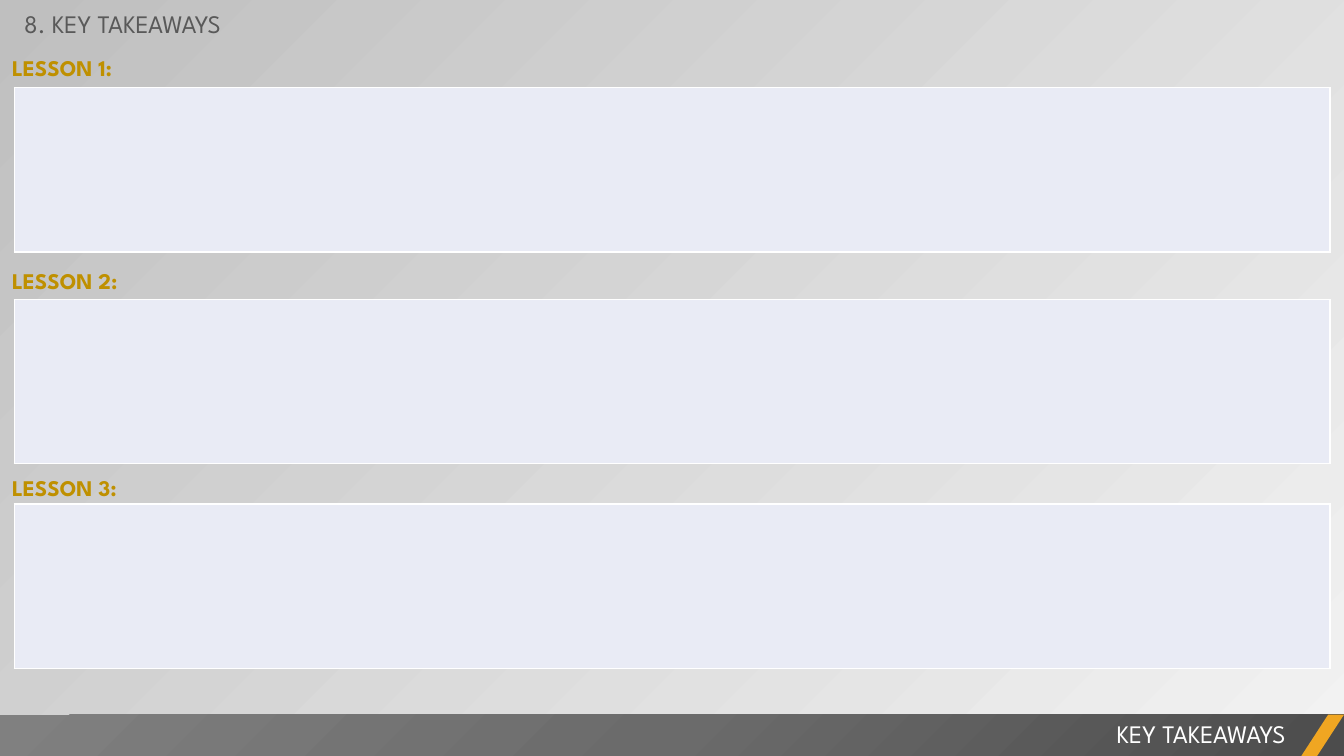
import pptx
import pptx.util
import pptx.dml.color
import pptx.enum.shapes
import pptx.enum.text
import pptx.oxml
import pptx.oxml.ns
from dataclasses import dataclass

Inches = pptx.util.Inches
Pt = pptx.util.Pt
Shape = pptx.enum.shapes.MSO_SHAPE
Align = pptx.enum.text.PP_ALIGN
NS = pptx.oxml.ns.nsdecls("a")


@dataclass(frozen=True)
class Theme:
    font: str = "League Spartan"
    title: int = 18
    label: int = 16
    gold: str = "BF9000"
    amber: str = "F0A622"
    gray: str = "595959"
    white: str = "FFFFFF"
    panel: str = "E9EBF5"
    back: tuple = ("F2F2F2", "BFBFBF")
    bar: tuple = ((0, "4C4C4C"), (50, "6B6B6B"), (100, "808080"))


THEME = Theme()


def color(code):
    return pptx.dml.color.RGBColor.from_string(code)


def apply(item, values):
    for name, value in values.items():
        setattr(item, name, value)


def box(at):
    return [Inches(n) for n in at]


# Background
def add_back(slide):
    fill = slide.background.fill
    fill.gradient()
    fill.gradient_angle = 135
    for stop, code, place in zip(fill.gradient_stops, THEME.back, (0, 1)):
        stop.color.rgb = color(code)
        stop.position = place


# Text
def add_text(slide, at, text, size, code, bold=False, inset=(0.1, 0.05), para=None):
    frame = slide.shapes.add_textbox(*box(at)).text_frame
    side, edge = box(inset)
    apply(frame, {
        "word_wrap": True,
        "auto_size": pptx.enum.text.MSO_AUTO_SIZE.SHAPE_TO_FIT_TEXT,
        "margin_left": side, "margin_right": side,
        "margin_top": edge, "margin_bottom": edge,
    })
    line = frame.paragraphs[0]
    apply(line, para or {})
    run = line.add_run()
    run.text = text
    apply(run.font, {"name": THEME.font, "size": Pt(size), "bold": bold})
    run.font.color.rgb = color(code)


# Answer panel: a table of one cell with a thin white border
def add_panel(slide, at):
    table = slide.shapes.add_table(1, 1, *box(at)).table
    apply(table, {"first_row": False, "horz_banding": False})
    cell = table.cell(0, 0)
    cell.fill.solid()
    cell.fill.fore_color.rgb = color(THEME.panel)
    props = cell._tc.get_or_add_tcPr()
    for spot, side in enumerate(("lnL", "lnR", "lnT", "lnB")):
        props.insert(spot, pptx.oxml.parse_xml(
            f'<a:{side} {NS} w="{Pt(1)}"><a:solidFill>'
            f'<a:srgbClr val="{THEME.white}"/></a:solidFill></a:{side}>'))


def add_lesson(slide, num, label_top, panel_top):
    add_panel(slide, (0.14, panel_top, 13.05, 1.63))
    add_text(slide, (0, label_top, 7.63, 0.4), f"LESSON {num}:",
             THEME.label, THEME.gold, True, (0.12, 0.06),
             {"line_spacing": Pt(21.5), "space_before": Pt(3.2)})


# Footer
def add_block(slide, kind, at, code):
    block = slide.shapes.add_shape(kind, *box(at))
    block.shadow.inherit = False
    block.line.fill.background()
    block.fill.solid()
    block.fill.fore_color.rgb = color(code)
    return block


def shade(block):
    stops = "".join(
        f'<a:gs pos="{place * 1000}"><a:srgbClr val="{code}"/></a:gs>'
        for place, code in THEME.bar)
    grad = pptx.oxml.parse_xml(
        f'<a:gradFill {NS} rotWithShape="1"><a:gsLst>{stops}</a:gsLst>'
        '<a:path path="circle"><a:fillToRect l="100000" t="100000"/></a:path>'
        '</a:gradFill>')
    props = block._element.spPr
    solid = props.find(pptx.oxml.ns.qn("a:solidFill"))
    props.replace(solid, grad)


def add_footer(slide):
    shade(add_block(slide, Shape.RECTANGLE, (0, 7.09, 13.33, 0.42), THEME.bar[0][1]))
    add_text(slide, (5.25, 7.08, 7.6, 0.4), "KEY TAKEAWAYS",
             THEME.title, THEME.white, para={"alignment": Align.RIGHT})
    slash = add_block(slide, Shape.PARALLELOGRAM, (12.9, 7.09, 0.43, 0.42), THEME.amber)
    slash.adjustments[0] = 0.65


def main():
    deck = pptx.Presentation()
    apply(deck, {"slide_width": Inches(13.33), "slide_height": Inches(7.5)})
    slide = deck.slides.add_slide(deck.slide_layouts[6])
    add_back(slide)
    tops = ((0.45, 0.87), (2.56, 2.97), (4.61, 5))
    for num, (label, panel) in enumerate(tops, 1):
        add_lesson(slide, num, label, panel)
    add_footer(slide)
    add_text(slide, (0.14, 0.03, 5.31, 0.4), "8. KEY TAKEAWAYS",
             THEME.title, THEME.gray)
    deck.save("out.pptx")


if __name__ == "__main__":
    main()
